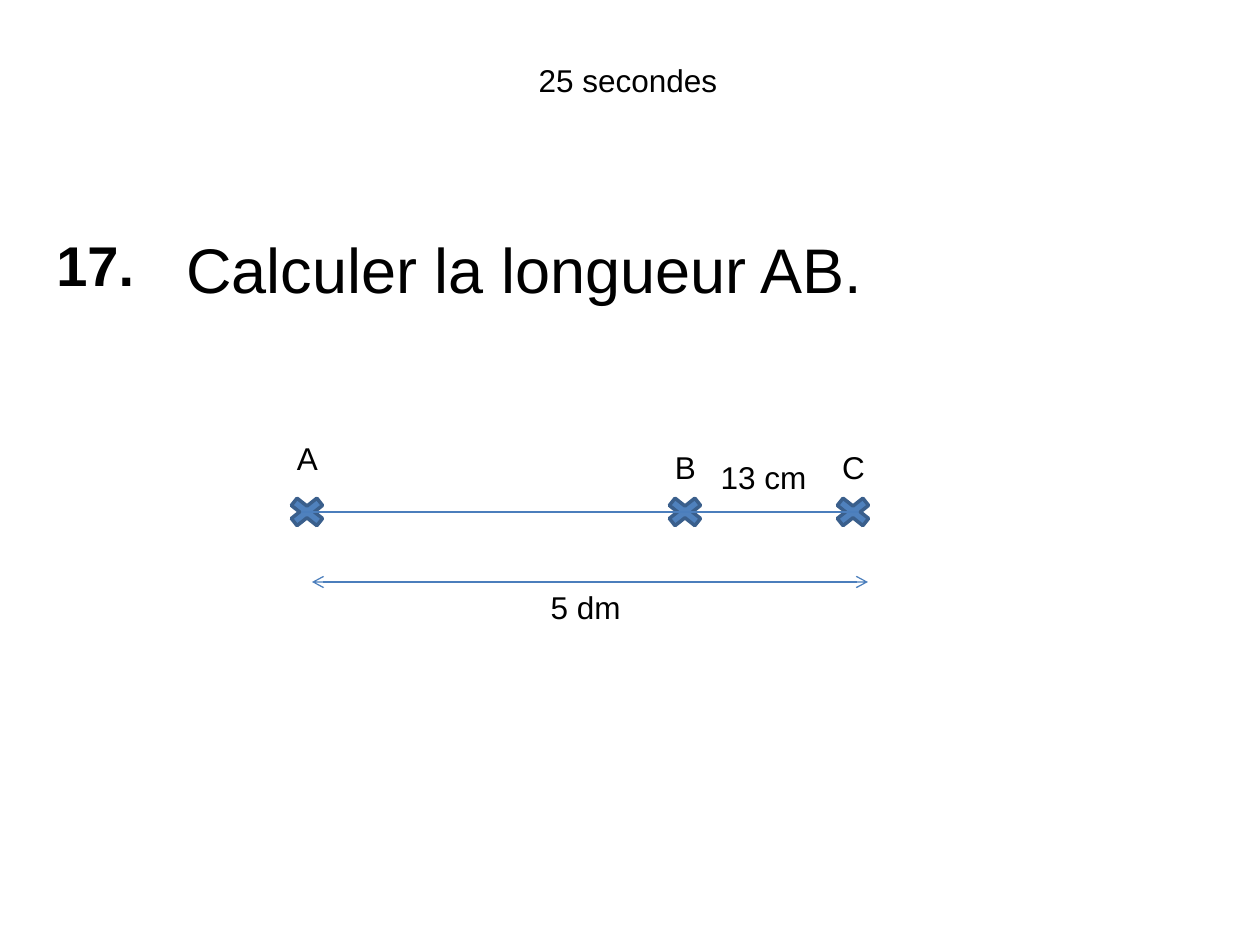
from dataclasses import dataclass

from lxml import etree
from pptx import Presentation
from pptx.dml.color import RGBColor
from pptx.enum.shapes import MSO_CONNECTOR, MSO_SHAPE
from pptx.enum.text import MSO_AUTO_SIZE, PP_ALIGN
from pptx.oxml.ns import qn
from pptx.util import Emu, Pt

LEFT, CENTER = PP_ALIGN.LEFT, PP_ALIGN.CENTER
CROSS = MSO_SHAPE.MATH_MULTIPLY
STRAIGHT = MSO_CONNECTOR.STRAIGHT
FIT_SHAPE = MSO_AUTO_SIZE.SHAPE_TO_FIT_TEXT
PIXELS_PER_INCH = 126


@dataclass(frozen=True)
class Theme:
    font: str = "Arial"
    text: RGBColor = RGBColor(0x00, 0x00, 0x00)
    cross_fill: RGBColor = RGBColor(0x4F, 0x81, 0xBD)
    cross_line: RGBColor = RGBColor(0x3A, 0x5F, 0x8C)
    segment: RGBColor = RGBColor(0x4B, 0x7E, 0xBC)
    question_size: int = 36
    number_size: int = 32
    label_size: int = 18
    cross_line_width: float = 2
    segment_width: float = 0.75


THEME = Theme()


@dataclass(frozen=True)
class Label:
    text: str
    left: int
    top: int
    width: int
    height: int = 50
    size: int = THEME.label_size
    bold: bool = False
    align: PP_ALIGN = CENTER


@dataclass(frozen=True)
class Point:
    name: str
    center: int
    label_top: int


@dataclass(frozen=True)
class Segment:
    start: int
    end: int
    y: int
    arrows: bool = False


# Geometry of the figure, in px
AXIS_Y = 512
MEASURE_Y = 582
CROSS_WIDTH, CROSS_HEIGHT = 49, 39
POINT_LABEL_WIDTH = 89
LENGTH_LABEL_WIDTH = 169

POINTS = [Point("A", 307, 433), Point("B", 685, 442), Point("C", 853, 442)]
SEGMENTS = [Segment(302, 858, AXIS_Y), Segment(312, 868, MEASURE_Y, arrows=True)]
LABELS = [
    Label("17.", 44, 224, 129, 81, THEME.number_size, True, LEFT),
    Label("Calculer la longueur AB.", 174, 224, 1042, 89, THEME.question_size, align=LEFT),
    Label("25 secondes", 441, 55, 374),
    Label("13 cm", 679, 452, LENGTH_LABEL_WIDTH),
    Label("5 dm", 501, MEASURE_Y, LENGTH_LABEL_WIDTH),
]


def px(length: int) -> Emu:
    return Emu(round(length * 914400 / PIXELS_PER_INCH))


def apply_format(target, values: dict) -> None:
    for name, value in values.items():
        setattr(target, name, value)


def draw_label(slide, label: Label) -> None:
    box = slide.shapes.add_textbox(
        px(label.left), px(label.top), px(label.width), px(label.height))
    apply_format(box.text_frame, {"word_wrap": True, "auto_size": FIT_SHAPE})
    paragraph = box.text_frame.paragraphs[0]
    paragraph.alignment = label.align
    run = paragraph.add_run()
    run.text = label.text
    apply_format(run.font, {
        "name": THEME.font, "size": Pt(label.size), "bold": label.bold})
    run.font.color.rgb = THEME.text


def draw_cross(slide, point: Point) -> None:
    shape = slide.shapes.add_shape(
        CROSS, px(point.center) - px(CROSS_WIDTH) // 2,
        px(AXIS_Y) - px(CROSS_HEIGHT) // 2, px(CROSS_WIDTH), px(CROSS_HEIGHT))
    shape.shadow.inherit = False
    shape.fill.solid()
    shape.fill.fore_color.rgb = THEME.cross_fill
    shape.line.color.rgb = THEME.cross_line
    shape.line.width = Pt(THEME.cross_line_width)


def draw_segment(slide, segment: Segment) -> None:
    connector = slide.shapes.add_connector(
        STRAIGHT, px(segment.start), px(segment.y), px(segment.end), px(segment.y))
    connector.line.color.rgb = THEME.segment
    connector.line.width = Pt(THEME.segment_width)
    properties = connector.element.spPr
    if segment.arrows:
        for end in ("a:headEnd", "a:tailEnd"):
            etree.SubElement(properties.find(qn("a:ln")), qn(end), type="arrow")
    etree.SubElement(properties, qn("a:effectLst"))


def main() -> None:
    presentation = Presentation()
    presentation.slide_width, presentation.slide_height = px(1260), px(945)
    slide = presentation.slides.add_slide(presentation.slide_layouts[6])

    # Points under the line that joins them
    for point in POINTS:
        draw_cross(slide, point)
    for segment in SEGMENTS:
        draw_segment(slide, segment)

    # Question, time limit, lengths and point names
    point_labels = [
        Label(point.name, point.center - POINT_LABEL_WIDTH // 2,
              point.label_top, POINT_LABEL_WIDTH)
        for point in POINTS
    ]
    for label in LABELS + point_labels:
        draw_label(slide, label)

    presentation.save("out.pptx")


if __name__ == "__main__":
    main()
